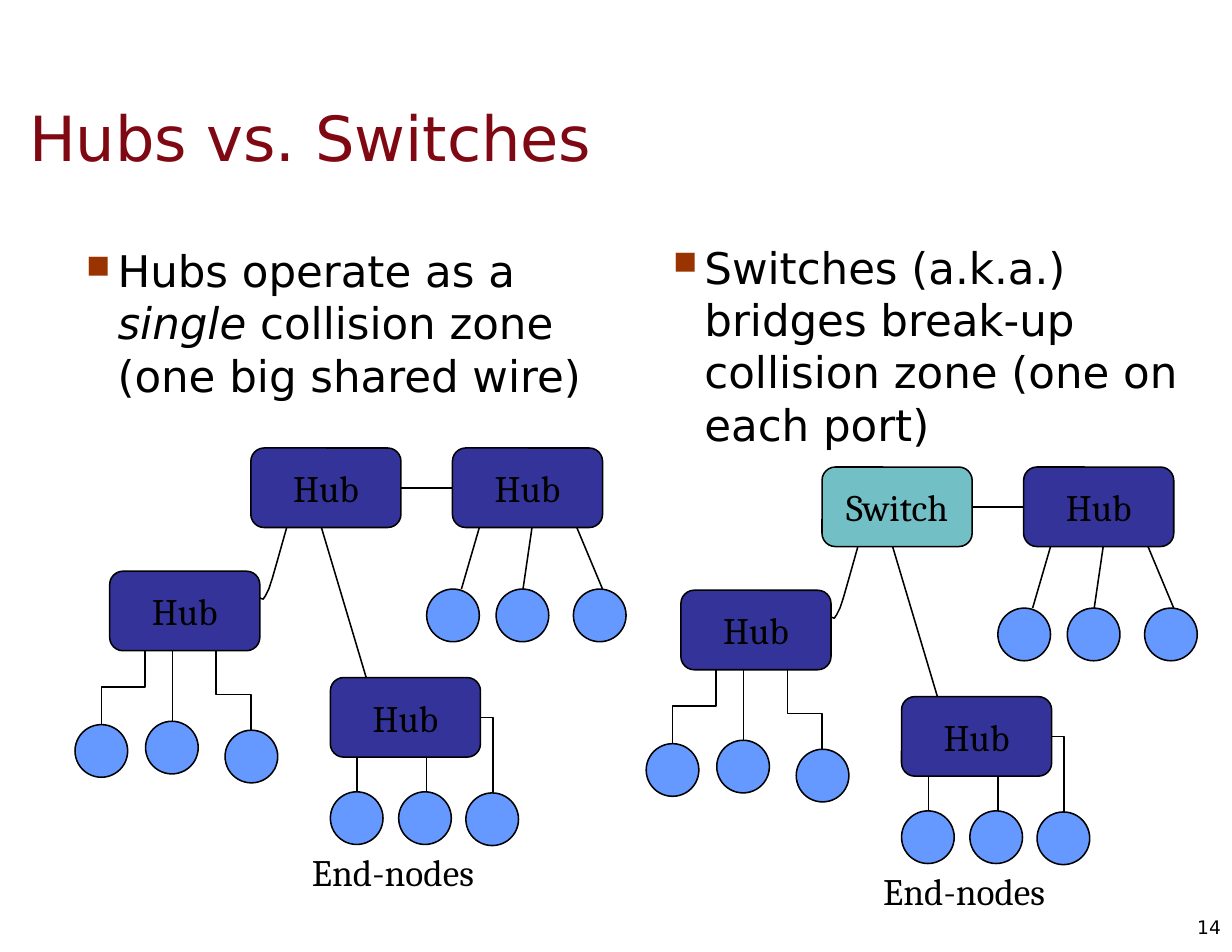
from dataclasses import dataclass

import lxml.etree
import pptx
import pptx.dml.color
import pptx.enum.shapes
import pptx.enum.text
import pptx.oxml.ns
import pptx.util

Inches = pptx.util.Inches
Pt = pptx.util.Pt
qn = pptx.oxml.ns.qn
SHAPE = pptx.enum.shapes.MSO_SHAPE
LINE = pptx.enum.shapes.MSO_CONNECTOR
ALIGN = pptx.enum.text.PP_ALIGN
MIDDLE = pptx.enum.text.MSO_ANCHOR.MIDDLE

COLORS = {
    "title": "7F0813",
    "text": "000000",
    "bullet": "993300",
    "hub": "333399",
    "switch": "72BFC5",
    "node": "6699FF",
}
FORMATS = {
    "title": {"name": "DejaVu Sans", "size": Pt(40), "bold": False},
    "body": {"name": "DejaVu Sans", "size": Pt(28)},
    "number": {"name": "DejaVu Sans", "size": Pt(12)},
    "label": {"name": "Cambria", "size": Pt(24)},
}
MARGINS = {
    "margin_left": Inches(0.11),
    "margin_right": Inches(0.11),
    "margin_top": Inches(0.06),
    "margin_bottom": Inches(0.06),
}
BOX_W, BOX_H, NODE = 1.34, 0.71, 0.47

BOXES = [(2.24, 4.0), (4.04, 4.0), (0.98, 5.1), (2.95, 6.05)]
NODES = [
    (0.67, 6.47), (1.3, 6.44), (2.01, 6.52),
    (3.81, 5.26), (4.43, 5.26), (5.12, 5.26),
    (2.95, 7.07), (3.56, 7.07), (4.16, 7.08),
]
WIRES = [
    (2.87, 4.71, 3.27, 6.05),
    (4.28, 4.71, 4.12, 5.26),
    (4.75, 4.71, 4.67, 5.26),
    (5.15, 4.71, 5.38, 5.26),
    (1.54, 5.81, 1.54, 6.44),
    (3.19, 6.76, 3.19, 7.07),
    (3.81, 6.76, 3.81, 7.07),
]
PATHS = [
    [(2.56, 4.71), (2.47, 5.03), (2.43, 5.17), (2.4, 5.26),
     (2.37, 5.32), (2.35, 5.35), (2.32, 5.34)],
    [(1.93, 5.81), (1.93, 6.2), (2.24, 6.2), (2.24, 6.52)],
]


@dataclass
class Network:
    dx: float
    dy: float
    root: str
    color: str


@dataclass
class Bullet:
    left: float
    top: float
    runs: list


NETWORKS = [Network(0, 0, "Hub", "hub"), Network(5.1, 0.17, "Switch", "switch")]
BULLETS = [
    Bullet(0.52, 2.12, [("Hubs operate as a ", False), ("single", True),
                        (" collision zone (one big shared wire)", False)]),
    Bullet(5.76, 2.09, [("Switches (a.k.a.) bridges break-up collision zone "
                         "(one on each port)", False)]),
]


def rgb(key: str):
    return pptx.dml.color.RGBColor.from_string(COLORS[key])


def apply(target, values: dict) -> None:
    for name, value in values.items():
        setattr(target, name, value)


def add_run(p, text: str, style: str, color: str = "text", italic: bool = False) -> None:
    r = p.add_run()
    r.text = text
    apply(r.font, {**FORMATS[style], "italic": italic})
    r.font.color.rgb = rgb(color)


def outline(sp) -> None:
    sp.line.color.rgb = rgb("text")
    sp.line.width = Pt(1)


def add_solid(s, kind, x: float, y: float, w: float, h: float, color: str):
    sp = s.shapes.add_shape(kind, Inches(x), Inches(y), Inches(w), Inches(h))
    sp.shadow.inherit = False
    sp.fill.solid()
    sp.fill.fore_color.rgb = rgb(color)
    outline(sp)
    return sp


def add_box(s, x: float, y: float, text: str, color: str):
    sp = add_solid(s, SHAPE.ROUNDED_RECTANGLE, x, y, BOX_W, BOX_H, color)
    tf = sp.text_frame
    apply(tf, {"word_wrap": False, "vertical_anchor": MIDDLE})
    tf.paragraphs[0].alignment = ALIGN.CENTER
    add_run(tf.paragraphs[0], text, "label")
    return sp


def add_wire(s, x1: float, y1: float, x2: float, y2: float, kind=LINE.STRAIGHT):
    c = s.shapes.add_connector(kind, Inches(x1), Inches(y1), Inches(x2), Inches(y2))
    outline(c)
    lxml.etree.SubElement(c._element.spPr, qn("a:effectLst"))
    return c


def add_path(s, points: list) -> None:
    first, *rest = [(Inches(x), Inches(y)) for x, y in points]
    builder = s.shapes.build_freeform(*first)
    builder.add_line_segments(rest, close=False)
    sp = builder.convert_to_shape()
    sp.shadow.inherit = False
    sp.fill.background()
    outline(sp)


def add_text(s, x: float, y: float, w: float, h: float, wrap: bool = True):
    tf = s.shapes.add_textbox(Inches(x), Inches(y), Inches(w), Inches(h)).text_frame
    tf.word_wrap = wrap
    return tf


def add_bullet(s, b: Bullet) -> None:
    tf = add_text(s, b.left, b.top, 5.05, 5.96)
    apply(tf, MARGINS)
    p = tf.paragraphs[0]
    pPr = p._p.get_or_add_pPr()
    pPr.set("marL", str(Inches(0.42)))
    pPr.set("indent", str(Inches(-0.28)))
    color = lxml.etree.SubElement(pPr, qn("a:buClr"))
    lxml.etree.SubElement(color, qn("a:srgbClr"), val=COLORS["bullet"])
    lxml.etree.SubElement(pPr, qn("a:buSzPct"), val="75000")
    lxml.etree.SubElement(pPr, qn("a:buChar"), char="■")
    for text, italic in b.runs:
        add_run(p, text, "body", italic=italic)


def add_network(s, n: Network) -> None:
    dx, dy = n.dx, n.dy
    labels = [(n.root, n.color)] + [("Hub", "hub")] * 3
    root, right, _, lower = [
        add_box(s, x + dx, y + dy, *label) for (x, y), label in zip(BOXES, labels)
    ]
    for x, y in NODES:
        add_solid(s, SHAPE.OVAL, x + dx, y + dy, NODE, NODE, "node")
    for x1, y1, x2, y2 in WIRES:
        add_wire(s, x1 + dx, y1 + dy, x2 + dx, y2 + dy)
    for points in PATHS:
        add_path(s, [(x + dx, y + dy) for x, y in points])

    link = add_wire(s, 3.58 + dx, 4.35 + dy, 4.04 + dx, 4.35 + dy)
    link.begin_connect(root, 3)
    link.end_connect(right, 1)

    step = add_wire(s, 0.77 + dx, 5.94 + dy, 1.43 + dx, 6.33 + dy, LINE.ELBOW)
    step._element.spPr.find(qn("a:xfrm")).set("rot", "5400000")

    corner = add_wire(s, 4.29 + dx, 6.4 + dy, 4.4 + dx, 7.08 + dy, LINE.ELBOW)
    corner._element.spPr.find(qn("a:prstGeom")).set("prst", "bentConnector2")
    corner.begin_connect(lower, 3)

    p = add_text(s, 2.52 + dx, 7.53 + dy, 1.81, 0.5, wrap=False).paragraphs[0]
    p.alignment = ALIGN.RIGHT
    add_run(p, "End-nodes", "label")


def main() -> None:
    prs = pptx.Presentation()
    apply(prs, {"slide_width": Inches(11), "slide_height": Inches(8.5)})
    s = prs.slides.add_slide(prs.slide_layouts[5])

    title = s.shapes.title
    apply(title, {"left": Inches(0.15), "top": Inches(0.7),
                  "width": Inches(10.53), "height": Inches(1.04)})
    apply(title.text_frame, {**MARGINS, "vertical_anchor": MIDDLE})
    p = title.text_frame.paragraphs[0]
    p.alignment = ALIGN.LEFT
    add_run(p, "Hubs vs. Switches", "title", "title")

    for b in BULLETS:
        add_bullet(s, b)
    for n in NETWORKS:
        add_network(s, n)

    tf = add_text(s, 10.53, 8.05, 0.47, 0.45)
    tf.vertical_anchor = MIDDLE
    tf.paragraphs[0].alignment = ALIGN.RIGHT
    add_run(tf.paragraphs[0], "14", "number")
    prs.save("out.pptx")


if __name__ == "__main__":
    main()
